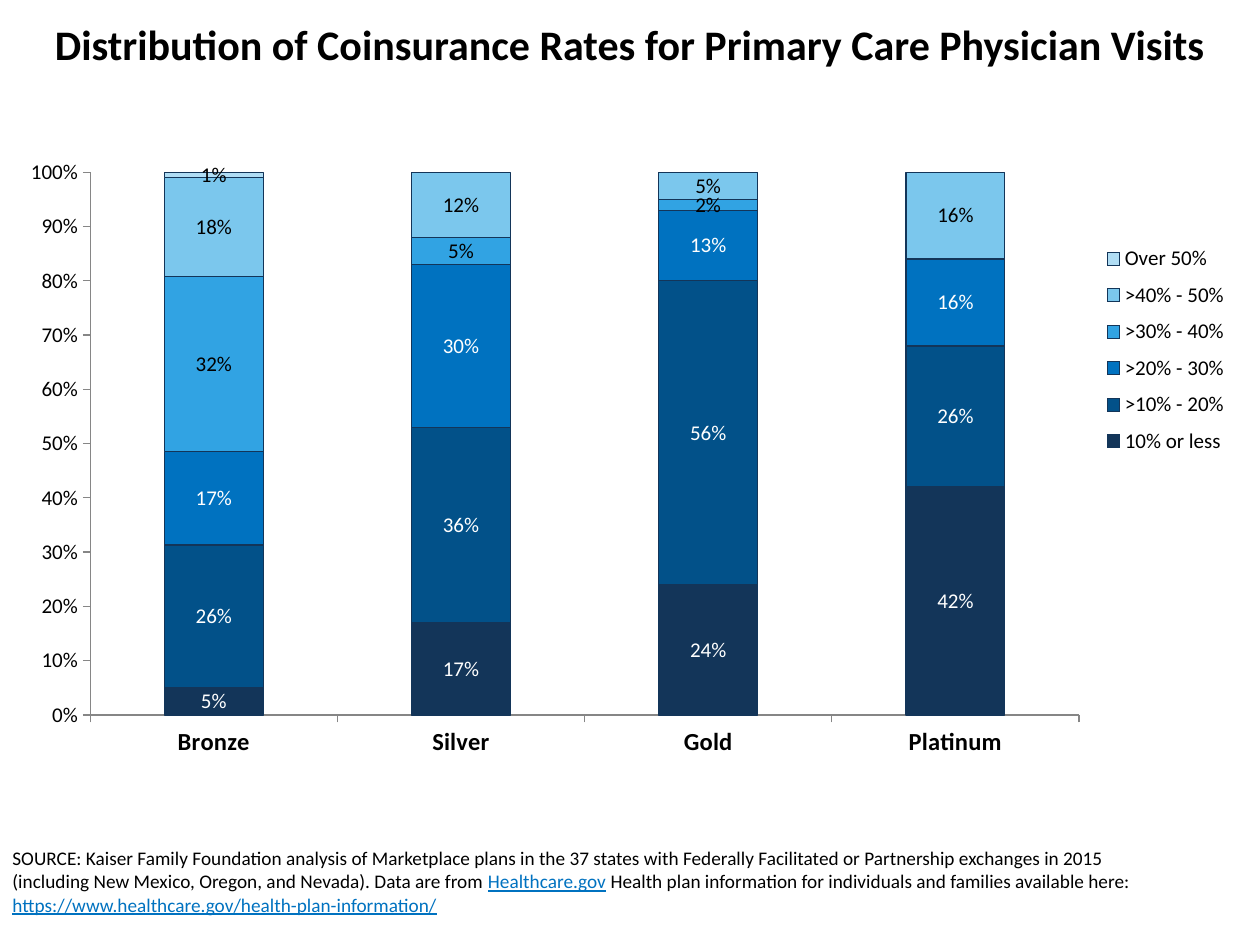
from dataclasses import dataclass

from lxml import etree
from pptx import Presentation
from pptx import util as u
from pptx.chart import data as chart_data
from pptx.dml.color import RGBColor
from pptx.enum import chart as ch, text
from pptx.oxml.ns import qn

COLORS = {
    "black": "000000",
    "white": "FFFFFF",
    "link": "0072C0",
    "outline": "133559",
    "axis": "868686",
}
FONT = "Calibri"
PERCENT = "0%;;"
PLANS = ["Bronze", "Silver", "Gold", "Platinum"]


@dataclass(frozen=True)
class RateBand:
    name: str
    shares: tuple[float, ...]
    fill: str
    label: str


@dataclass(frozen=True)
class SourcePart:
    wording: str
    is_link: bool = False


BANDS = [
    RateBand("10% or less", (0.05, 0.17, 0.24, 0.42), "133559", "white"),
    RateBand(">10% - 20%", (0.26, 0.36, 0.56, 0.26), "025189", "white"),
    RateBand(">20% - 30%", (0.17, 0.30, 0.13, 0.16), "0072C0", "white"),
    RateBand(">30% - 40%", (0.32, 0.05, 0.02, 0), "31A3E3", "black"),
    RateBand(">40% - 50%", (0.18, 0.12, 0.05, 0.16), "7BC7ED", "black"),
    RateBand("Over 50%", (0.01, 0, 0, 0), "B0DDF4", "black"),
]
SOURCE = [
    SourcePart(
        "SOURCE: Kaiser Family Foundation analysis of Marketplace plans in the 37 states "
        "with Federally Facilitated or Partnership exchanges in 2015 (including New Mexico, "
        "Oregon, and Nevada). Data are from "
    ),
    SourcePart("Healthcare.gov", True),
    SourcePart(" Health plan information for individuals and families available here: "),
    SourcePart("https://www.healthcare.gov/health-plan-information/", True),
]


def style_font(font, size: float, color: str, bold: bool = False) -> None:
    font.name = FONT
    font.size = u.Pt(size)
    font.bold = bold
    font.color.rgb = RGBColor.from_string(COLORS[color])


def place(parent, index: int, inner: bool, **fractions: float) -> None:
    for old in parent.findall(qn("c:layout")):
        parent.remove(old)
    layout = etree.Element(qn("c:layout"))
    manual = etree.SubElement(layout, qn("c:manualLayout"))
    if inner:
        etree.SubElement(manual, qn("c:layoutTarget")).set("val", "inner")
    for mode in ("xMode", "yMode"):
        etree.SubElement(manual, qn(f"c:{mode}")).set("val", "edge")
    for key, fraction in fractions.items():
        etree.SubElement(manual, qn(f"c:{key}")).set("val", str(fraction))
    parent.insert(index, layout)


def add_title(slide) -> None:
    title = slide.shapes.title
    title.left, title.top = u.Inches(0.1), u.Inches(0.1)
    title.width, title.height = u.Inches(9.8), u.Inches(1)
    frame = title.text_frame
    frame.text = "Distribution of Coinsurance Rates for Primary Care Physician Visits"
    frame.vertical_anchor = text.MSO_ANCHOR.TOP
    frame.auto_size = text.MSO_AUTO_SIZE.NONE
    heading = frame.paragraphs[0]
    heading.alignment = text.PP_ALIGN.CENTER
    style_font(heading.runs[0].font, 24, "black", bold=True)


def style_axis(axis, size: float, bold: bool) -> None:
    axis.has_major_gridlines = False
    axis.major_tick_mark = ch.XL_TICK_MARK.OUTSIDE
    axis.minor_tick_mark = ch.XL_TICK_MARK.NONE
    axis.format.line.color.rgb = RGBColor.from_string(COLORS["axis"])
    axis.format.line.width = u.Pt(0.75)
    style_font(axis.tick_labels.font, size, "black", bold)


def style_band(series, band: RateBand) -> None:
    series.format.fill.solid()
    series.format.fill.fore_color.rgb = RGBColor.from_string(band.fill)
    series.format.line.color.rgb = RGBColor.from_string(COLORS["outline"])
    series.format.line.width = u.Pt(0.75)
    labels = series.data_labels
    labels.show_value = True
    labels.number_format = PERCENT
    labels.number_format_is_linked = False
    style_font(labels.font, 12, band.label)


def add_rates_chart(slide) -> None:
    rates = chart_data.CategoryChartData(number_format="0%")
    rates.categories = PLANS
    for band in BANDS:
        rates.add_series(band.name, band.shares)
    chart = slide.shapes.add_chart(
        ch.XL_CHART_TYPE.COLUMN_STACKED_100,
        u.Inches(0.03), u.Inches(1.17), u.Inches(9.81), u.Inches(4.95), rates,
    ).chart
    chart.has_title = False
    style_font(chart.font, 12, "black")

    plot = chart.plots[0]
    plot.gap_width = 150
    plot.overlap = 100
    plot.vary_by_categories = False
    for series, band in zip(plot.series, BANDS):
        style_band(series, band)

    style_axis(chart.category_axis, 14, True)
    shares = chart.value_axis
    style_axis(shares, 12, False)
    shares.minimum_scale, shares.maximum_scale, shares.major_unit = 0, 1, 0.1
    shares.tick_labels.number_format = "0%"
    shares.tick_labels.number_format_is_linked = False

    chart.has_legend = True
    legend = chart.legend
    legend.position = ch.XL_LEGEND_POSITION.RIGHT
    legend.include_in_layout = False
    style_font(legend.font, 12, "black")
    place(chart._chartSpace.chart.plotArea, 0, True, x=0.07, y=0.04, w=0.8, h=0.87)
    place(legend._element, 1, False, x=0.88, y=0.14, w=0.12, h=0.37)


def add_source(slide) -> None:
    box = slide.shapes.add_textbox(u.Inches(0), u.Inches(6.67), u.Inches(9.25), u.Inches(0.84))
    frame = box.text_frame
    frame.word_wrap = True
    citation = frame.paragraphs[0]
    for part in SOURCE:
        run = citation.add_run()
        run.text = part.wording
        style_font(run.font, 11, "link" if part.is_link else "black")
        run.font.underline = part.is_link


def main() -> None:
    deck = Presentation()
    deck.slide_width, deck.slide_height = u.Inches(10), u.Inches(7.5)
    slide = deck.slides.add_slide(deck.slide_layouts[5])
    add_title(slide)
    add_rates_chart(slide)
    add_source(slide)
    deck.save("out.pptx")


if __name__ == "__main__":
    main()
